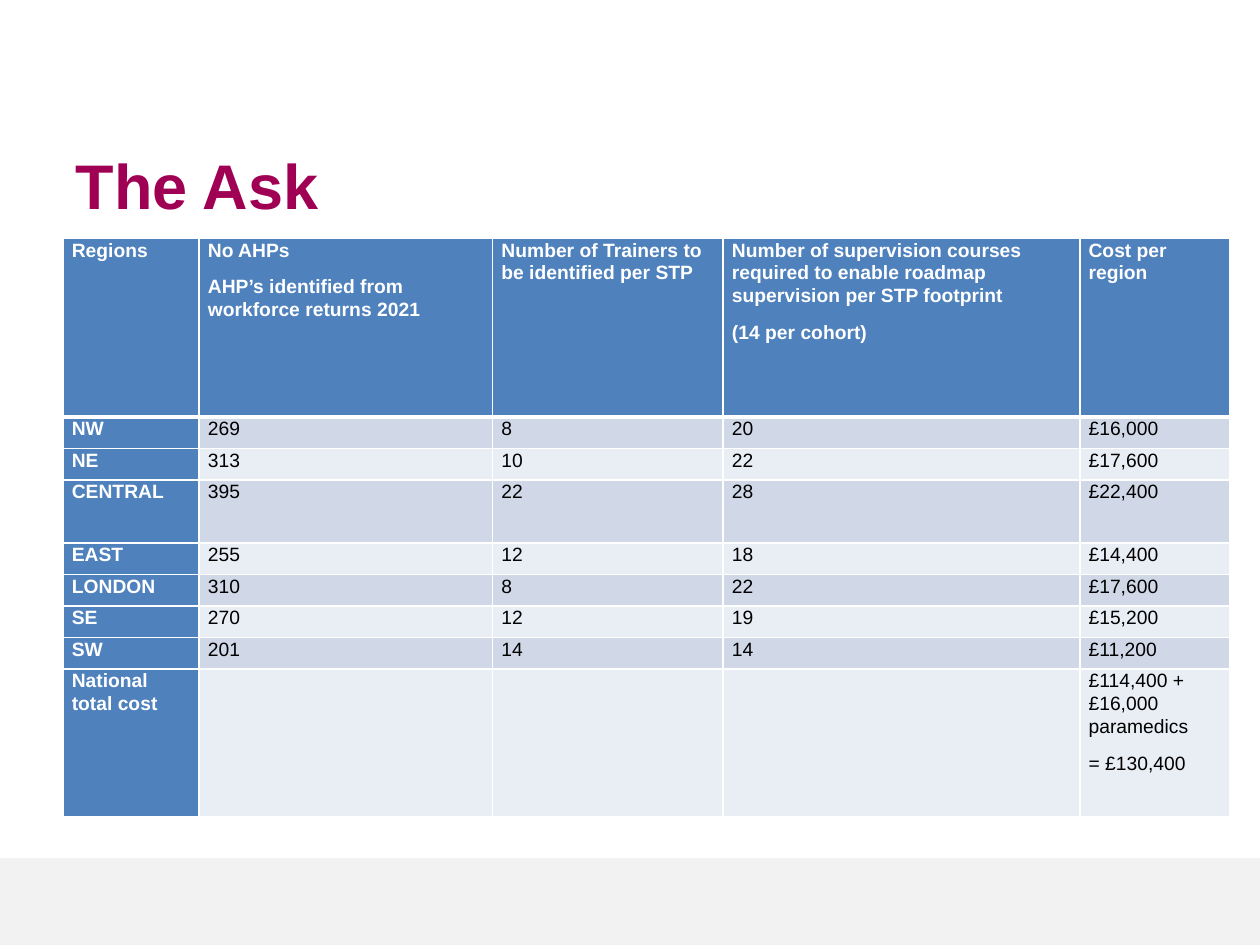
from dataclasses import dataclass

from lxml.etree import SubElement
from pptx import Presentation
from pptx.dml.color import RGBColor
from pptx.enum.shapes import MSO_SHAPE
from pptx.enum.text import MSO_ANCHOR, PP_ALIGN
from pptx.oxml.ns import qn
from pptx.slide import Slide
from pptx.table import _Cell
from pptx.util import Inches, Pt

WHITE = RGBColor(0xFF, 0xFF, 0xFF)
BLACK = RGBColor(0x00, 0x00, 0x00)
MAGENTA = RGBColor(0xA0, 0x00, 0x54)
BLUE = RGBColor(0x4F, 0x81, 0xBD)
DARK_BAND = RGBColor(0xD0, 0xD8, 0xE8)
LIGHT_BAND = RGBColor(0xE9, 0xED, 0xF4)
FOOTER_GREY = RGBColor(0xF2, 0xF2, 0xF2)
FONT = "Arial"
COLUMN_WIDTHS = (1.08, 2.33, 1.83, 2.83, 1.19)


@dataclass(frozen=True)
class TableRow:
    texts: tuple[str, ...]
    height: float = 0.25


ROWS = (
    TableRow((
        "Regions",
        "No AHPs\nAHP’s identified from workforce returns 2021",
        "Number of Trainers to be identified per STP",
        "Number of supervision courses required to enable roadmap "
        "supervision per STP footprint\n(14 per cohort)",
        "Cost per region",
    ), 1.42),
    TableRow(("NW", "269", "8", "20", "£16,000")),
    TableRow(("NE", "313", "10", "22", "£17,600")),
    TableRow(("CENTRAL", "395", "22", "28", "£22,400"), 0.5),
    TableRow(("EAST", "255", "12", "18", "£14,400")),
    TableRow(("LONDON", "310", "8", "22", "£17,600")),
    TableRow(("SE", "270", "12", "19", "£15,200")),
    TableRow(("SW", "201", "14", "14", "£11,200")),
    TableRow((
        "National total cost", "", "", "",
        "£114,400 + £16,000 paramedics\n= £130,400",
    ), 1.17),
)


def set_borders(cell: _Cell, top: float, bottom: float) -> None:
    properties = cell._tc.get_or_add_tcPr()
    widths = {"a:lnL": 1, "a:lnR": 1, "a:lnT": top, "a:lnB": bottom}
    for position, (tag, width) in enumerate(widths.items()):
        line = SubElement(properties, qn(tag), w=str(Pt(width)))
        fill = SubElement(line, qn("a:solidFill"))
        SubElement(fill, qn("a:srgbClr"), val=str(WHITE))
        properties.insert(position, line)


def format_cell(cell: _Cell, text: str, fill: RGBColor, heading: bool) -> None:
    cell.margin_left = cell.margin_right = Inches(0.07)
    cell.margin_top = cell.margin_bottom = 0
    cell.fill.solid()
    cell.fill.fore_color.rgb = fill
    cell.text = text
    for paragraph in cell.text_frame.paragraphs:
        paragraph.line_spacing = 1.07
        paragraph.space_after = Pt(8)
        paragraph.font.name = FONT
        paragraph.font.size = Pt(11)
        paragraph.font.bold = heading
        paragraph.font.color.rgb = WHITE if heading else BLACK


def add_footer_band(slide: Slide) -> None:
    band = slide.shapes.add_shape(
        MSO_SHAPE.RECTANGLE, 0, Inches(6.81), Inches(10), Inches(0.69))
    band.shadow.inherit = False
    band.fill.solid()
    band.fill.fore_color.rgb = FOOTER_GREY
    band.line.fill.background()


def add_title(slide: Slide, text: str) -> None:
    title = slide.shapes.title
    title.left, title.top = Inches(0.5), Inches(1.09)
    title.width, title.height = Inches(8.5), Inches(0.74)
    title.text_frame.text = text
    title.text_frame.vertical_anchor = MSO_ANCHOR.MIDDLE
    paragraph = title.text_frame.paragraphs[0]
    paragraph.alignment = PP_ALIGN.LEFT
    paragraph.font.name = FONT
    paragraph.font.size = Pt(36)
    paragraph.font.bold = True
    paragraph.font.color.rgb = MAGENTA


def add_regions_table(slide: Slide) -> None:
    table = slide.shapes.add_table(
        len(ROWS), len(COLUMN_WIDTHS), Inches(0.5), Inches(1.89),
        Inches(sum(COLUMN_WIDTHS)), Inches(sum(row.height for row in ROWS))).table
    table.first_col = True
    for column, width in zip(table.columns, COLUMN_WIDTHS):
        column.width = Inches(width)
    for row_index, row in enumerate(ROWS):
        table.rows[row_index].height = Inches(row.height)
        band = DARK_BAND if row_index % 2 else LIGHT_BAND
        for column_index, text in enumerate(row.texts):
            cell = table.cell(row_index, column_index)
            heading = row_index == 0 or column_index == 0
            format_cell(cell, text, BLUE if heading else band, heading)
            set_borders(cell, top=3 if row_index == 1 else 1,
                        bottom=3 if row_index == 0 else 1)


def main() -> None:
    presentation = Presentation()
    presentation.slide_width = Inches(10)
    presentation.slide_height = Inches(7.5)
    slide = presentation.slides.add_slide(presentation.slide_layouts[5])
    add_footer_band(slide)
    add_title(slide, "The Ask")
    add_regions_table(slide)
    presentation.save("out.pptx")


if __name__ == "__main__":
    main()
